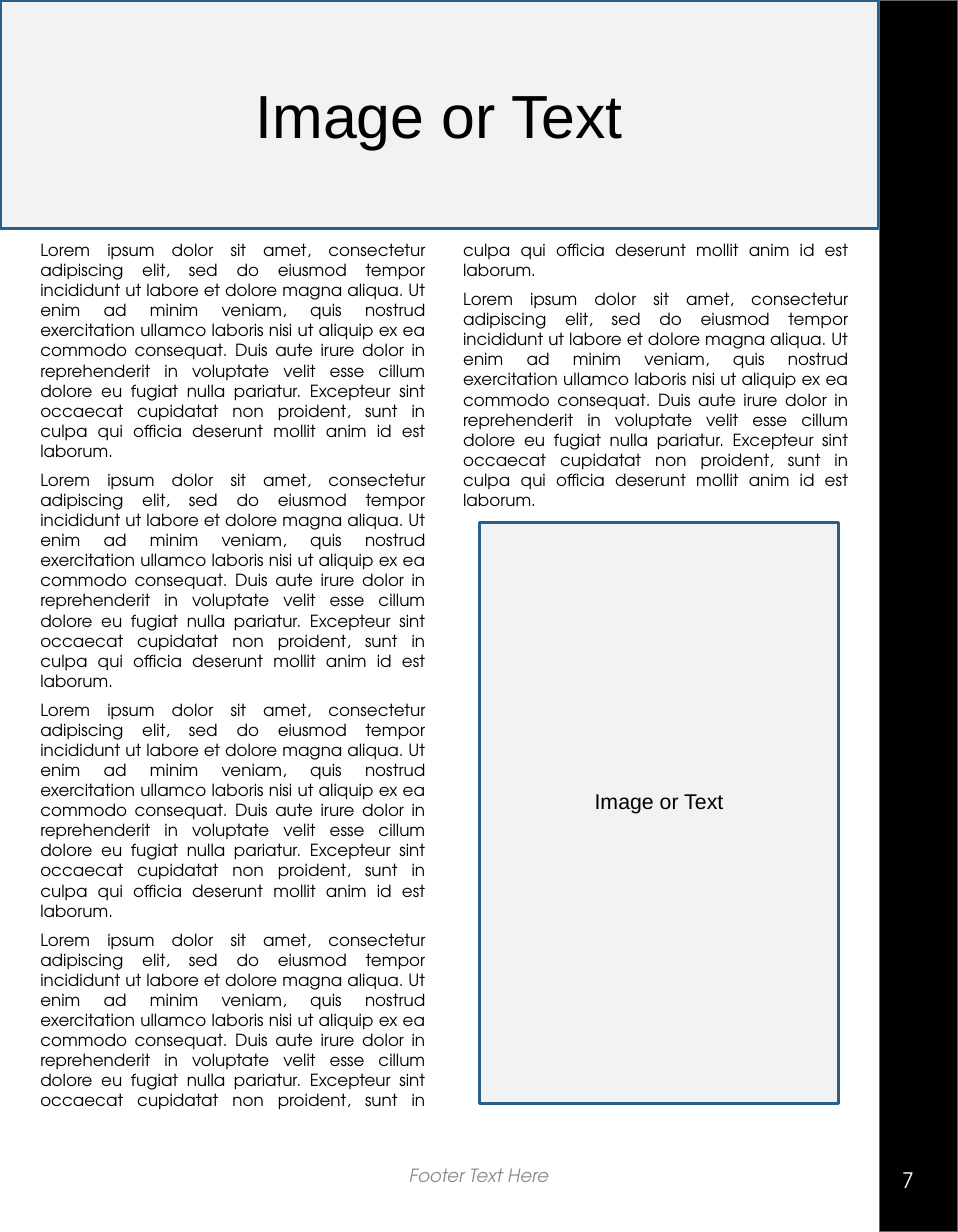
from pptx import Presentation
from pptx.dml.color import RGBColor
from pptx.enum.shapes import MSO_SHAPE
from pptx.enum.text import MSO_ANCHOR as Anchor, MSO_AUTO_SIZE, PP_ALIGN as Align
from pptx.util import Pt

SLIDE_W, SLIDE_H = 630, 810
COLORS = {
    "black": "000000",
    "white": "FFFFFF",
    "panel": "F2F2F2",
    "frame": "2B5F8A",
    "rail_edge": "666666",
    "footer": "8C8C8C",
}
SANS, GOTHIC = "Arial", "TeX Gyre Adventor"
LOREM = (
    "Lorem ipsum dolor sit amet, consectetur adipiscing elit, sed do eiusmod tempor "
    "incididunt ut labore et dolore magna aliqua. Ut enim ad minim veniam, quis nostrud "
    "exercitation ullamco laboris nisi ut aliquip ex ea commodo consequat. Duis aute irure "
    "dolor in reprehenderit in voluptate velit esse cillum dolore eu fugiat nulla pariatur. "
    "Excepteur sint occaecat cupidatat non proident, sunt in culpa qui officia deserunt "
    "mollit anim id est laborum."
)


def rgb(name):
    return RGBColor.from_string(COLORS[name])


def write(shape, *texts, size, font=GOTHIC, color="black", align=Align.LEFT,
          anchor=Anchor.TOP, italic=False, gap=0, insets=(7.2, 3.6, 7.2, 3.6), wrap=True):
    """Fill a shape with one paragraph per text; insets run left, top, right, bottom."""
    frame = shape.text_frame
    frame.auto_size = MSO_AUTO_SIZE.NONE
    frame.word_wrap = wrap
    frame.vertical_anchor = anchor
    (frame.margin_left, frame.margin_top,
     frame.margin_right, frame.margin_bottom) = map(Pt, insets)
    for i, text in enumerate(texts):
        paragraph = frame.add_paragraph() if i else frame.paragraphs[0]
        paragraph.alignment = align
        paragraph.space_before = Pt(gap if i else 0)
        run = paragraph.add_run()
        run.text = text
        run.font.name, run.font.size, run.font.italic = font, Pt(size), italic
        run.font.color.rgb = rgb(color)


def paint(shape, fill, line, weight):
    shape.fill.solid()
    shape.fill.fore_color.rgb = rgb(fill)
    shape.line.color.rgb = rgb(line)
    shape.line.width = Pt(weight)


def add_rect(slide, box):
    rect = slide.shapes.add_shape(MSO_SHAPE.RECTANGLE, *map(Pt, box))
    rect.shadow.inherit = False
    return rect


def page_rail(slide, box, number):
    left, top, width, height = box
    paint(add_rect(slide, box), "black", "rail_edge", 0.75)
    page = slide.shapes.add_textbox(
        Pt(left + 8), Pt(top + height - 46), Pt(32), Pt(24.5))
    write(page, number, size=14, color="white", wrap=False)


def header(slide, box):
    title = slide.shapes.title
    title.left, title.top, title.width, title.height = map(Pt, box)
    paint(title, "panel", "frame", 2)
    write(title, "Image or Text", size=40, font=SANS, align=Align.CENTER,
          anchor=Anchor.MIDDLE)


def article(slide, box):
    body = slide.shapes.add_textbox(*map(Pt, box))
    write(body, *[LOREM] * 5, size=11, align=Align.JUSTIFY, gap=5.8, insets=(7.2,) * 4)
    # Two columns, and a slight paragraph indent
    for body_pr in body.element.xpath(".//a:bodyPr"):
        body_pr.set("numCol", "2")
        body_pr.set("spcCol", str(Pt(21.6)))
    for paragraph_pr in body.element.xpath(".//a:pPr"):
        paragraph_pr.set("marL", str(Pt(2.9)))
        paragraph_pr.set("indent", "0")


def picture_panel(slide, box):
    panel = add_rect(slide, box)
    paint(panel, "panel", "frame", 2)
    # The deeper bottom inset lifts the label above the middle
    write(panel, "Image or Text", size=14, font=SANS, align=Align.CENTER,
          anchor=Anchor.MIDDLE, insets=(7.2, 3.6, 7.2, 19.7))


def footer(slide, box):
    write(slide.shapes.add_textbox(*map(Pt, box)), "Footer Text Here", size=12,
          color="footer", align=Align.CENTER, anchor=Anchor.MIDDLE, italic=True)


def main():
    deck = Presentation()
    deck.slide_width, deck.slide_height = Pt(SLIDE_W), Pt(SLIDE_H)
    slide = deck.slides.add_slide(deck.slide_layouts[5])
    rail_left, header_height = 578.2, 150.5

    page_rail(slide, (rail_left, 0, SLIDE_W - rail_left, SLIDE_H), "7")
    header(slide, (0, 0, rail_left - 0.7, header_height))
    article(slide, (16.5, header_height, 548.7, 593.3))
    picture_panel(slide, (315.3, 343.5, 236.2, 382.3))
    footer(slide, (208.8, 751, 212.4, 43.2))
    deck.save("out.pptx")


if __name__ == "__main__":
    main()
